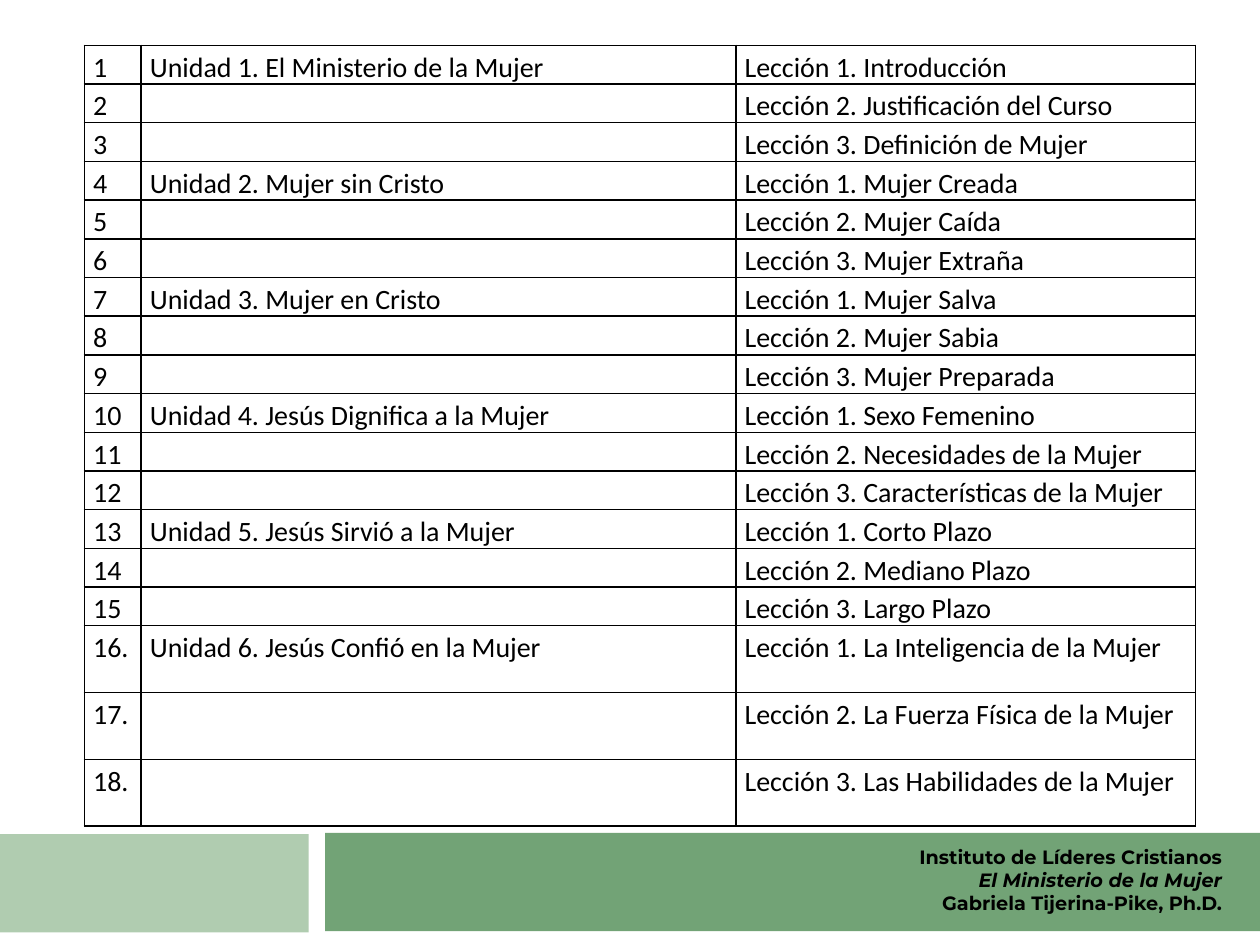
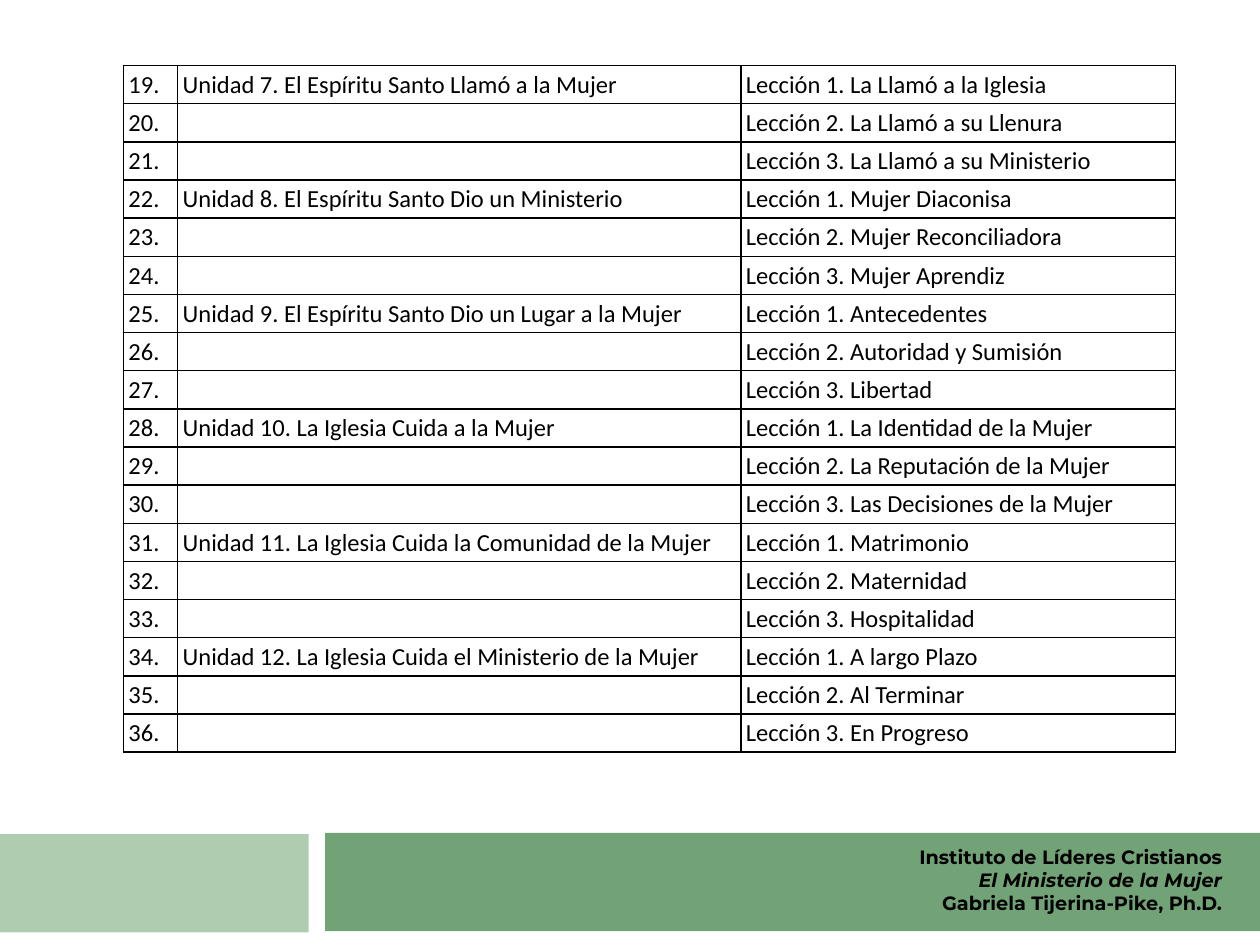
from lxml.etree import SubElement
from pptx import Presentation
from pptx.dml.color import RGBColor
from pptx.enum.shapes import MSO_SHAPE
from pptx.enum.text import PP_ALIGN
from pptx.oxml.ns import qn
from pptx.util import Inches, Pt

BLACK = "000000"
BANDS = [
    ("B0CCB0", (-0.01, 6.62, 2.46, 0.78)),
    ("72A376", (2.58, 6.61, 7.42, 0.78)),
]
FOOTER = [
    ("Instituto de Líderes Cristianos", False),
    ("El Ministerio de la Mujer", True),
    ("Gabriela Tijerina-Pike, Ph.D.", False),
]
FOOTER_BOX = (1.61, 6.66, 8.19, 0.66)

# Each unit has three lessons; "tall" counts the taller rows at the end.
PAGES = [
    {
        "box": (0.67, 0.36, 8.82, 6.2), "cols": (0.45, 4.72, 3.65),
        "start": 1, "size": 16, "inset": 0.07, "tall": 3,
        "units": [
            ("El Ministerio de la Mujer",
             ["Introducción", "Justificación del Curso", "Definición de Mujer"]),
            ("Mujer sin Cristo",
             ["Mujer Creada", "Mujer Caída", "Mujer Extraña"]),
            ("Mujer en Cristo",
             ["Mujer Salva", "Mujer Sabia", "Mujer Preparada"]),
            ("Jesús Dignifica a la Mujer",
             ["Sexo Femenino", "Necesidades de la Mujer",
              "Características de la Mujer"]),
            ("Jesús Sirvió a la Mujer",
             ["Corto Plazo", "Mediano Plazo", "Largo Plazo"]),
            ("Jesús Confió en la Mujer",
             ["La Inteligencia de la Mujer", "La Fuerza Física de la Mujer",
              "Las Habilidades de la Mujer"]),
        ],
    },
    {
        "box": (0.98, 0.52, 8.35, 5.45), "cols": (0.43, 4.47, 3.45),
        "start": 7, "size": 14, "inset": 0.04, "tall": 0,
        "units": [
            ("El Espíritu Santo Llamó a la Mujer",
             ["La Llamó a la Iglesia", "La Llamó a su Llenura",
              "La Llamó a su Ministerio"]),
            ("El Espíritu Santo Dio un Ministerio",
             ["Mujer Diaconisa", "Mujer Reconciliadora", "Mujer Aprendiz"]),
            ("El Espíritu Santo Dio un Lugar a la Mujer",
             ["Antecedentes", "Autoridad y Sumisión", "Libertad"]),
            ("La Iglesia Cuida a la Mujer",
             ["La Identidad de la Mujer", "La Reputación de la Mujer",
              "Las Decisiones de la Mujer"]),
            ("La Iglesia Cuida la Comunidad de la Mujer",
             ["Matrimonio", "Maternidad", "Hospitalidad"]),
            ("La Iglesia Cuida el Ministerio de la Mujer",
             ["A largo Plazo", "Al Terminar", "En Progreso"]),
        ],
    },
]
TALL = 0.53
DOTTED = 16  # lesson numbers take a dot from here on


def color(code):
    return RGBColor.from_string(code)


def inches(box):
    return [Inches(n) for n in box]


def write(par, text, font="Calibri", size=16, bold=False, italic=False,
          align=None, space=None):
    par.alignment = align
    par.line_spacing = space
    if not text:
        # An empty cell still needs a text size, or its row grows.
        SubElement(par._p, qn("a:endParaRPr"), sz=str(size * 100))
        return
    run = par.add_run()
    run.text = text
    face = run.font
    face.name, face.size = font, Pt(size)
    face.bold, face.italic = bold, italic
    face.color.rgb = color(BLACK)


def add_frame(slide):
    """Draw the bands and the footer shared by all slides."""
    for code, box in BANDS:
        band = slide.shapes.add_shape(MSO_SHAPE.RECTANGLE, *inches(box))
        band.shadow.inherit = False
        band.fill.solid()
        band.fill.fore_color.rgb = color(code)
        band.line.fill.background()
    frame = slide.shapes.add_textbox(*inches(FOOTER_BOX)).text_frame
    frame.word_wrap = True
    for i, (text, italic) in enumerate(FOOTER):
        par = frame.add_paragraph() if i else frame.paragraphs[0]
        write(par, text, font="Montserrat", size=11, bold=True,
              italic=italic, align=PP_ALIGN.RIGHT)


def add_borders(cell):
    props = cell._tc.get_or_add_tcPr()
    for side in ("lnL", "lnR", "lnT", "lnB"):
        line = SubElement(props, qn(f"a:{side}"), w=str(Pt(1)))
        fill = SubElement(line, qn("a:solidFill"))
        SubElement(fill, qn("a:srgbClr"), val=BLACK)


def list_rows(units, start):
    rows = []
    for unit, (name, lessons) in enumerate(units, start):
        for i, lesson in enumerate(lessons, 1):
            num = (unit - 1) * 3 + i
            rows.append((
                f"{num}." if num >= DOTTED else str(num),
                f"Unidad {unit}. {name}" if i == 1 else "",
                f"Lección {i}. {lesson}",
            ))
    return rows


def add_plan(slide, page):
    rows = list_rows(page["units"], page["start"])
    short = len(rows) - page["tall"]
    height = (page["box"][3] - page["tall"] * TALL) / short
    table = slide.shapes.add_table(
        len(rows), len(page["cols"]), *inches(page["box"])).table
    table.first_row = table.horz_banding = False
    for col, width in zip(table.columns, page["cols"]):
        col.width = Inches(width)
    for r, row in enumerate(rows):
        table.rows[r].height = Inches(height if r < short else TALL)
        for c, text in enumerate(row):
            cell = table.cell(r, c)
            cell.margin_left = cell.margin_right = Inches(page["inset"])
            cell.margin_top = cell.margin_bottom = 0
            add_borders(cell)
            cell.fill.background()
            write(cell.text_frame.paragraphs[0], text,
                  size=page["size"], space=1.15)


def main():
    deck = Presentation()
    deck.slide_width, deck.slide_height = Inches(10), Inches(7.5)
    for page in PAGES:
        slide = deck.slides.add_slide(deck.slide_layouts[6])
        add_frame(slide)
        add_plan(slide, page)
    deck.save("out.pptx")


if __name__ == "__main__":
    main()
